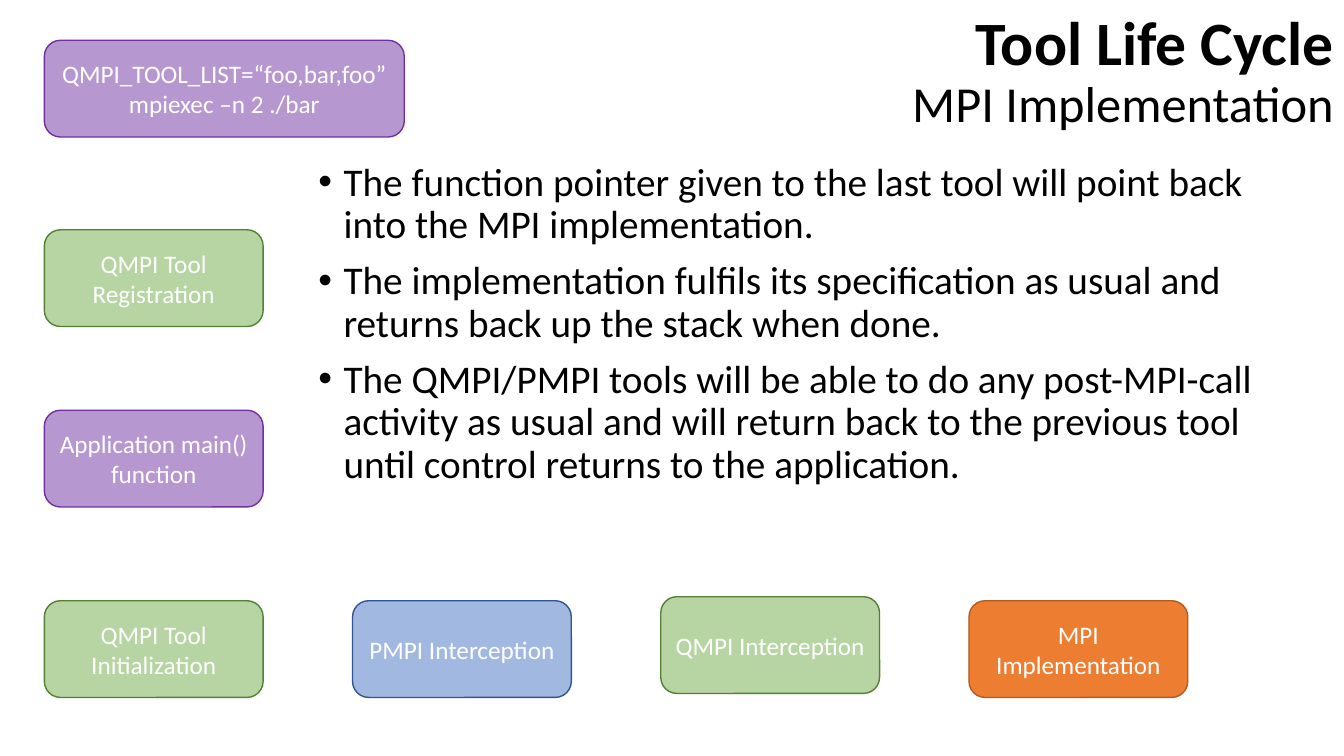
from lxml import etree
from pptx import Presentation
from pptx.dml.color import RGBColor
from pptx.enum.shapes import MSO_SHAPE
from pptx.enum.text import MSO_ANCHOR, PP_ALIGN
from pptx.oxml.ns import qn
from pptx.util import Inches, Pt

ROUNDED = MSO_SHAPE.ROUNDED_RECTANGLE
MIDDLE, TOP = MSO_ANCHOR.MIDDLE, MSO_ANCHOR.TOP
CENTER, RIGHT = PP_ALIGN.CENTER, PP_ALIGN.RIGHT

FONT = "Calibri"
BLACK, WHITE = "000000", "FFFFFF"
# Fill, line, opacity in percent
PURPLE = ("7030A0", "7030A0", 50)
GREEN = ("70AD47", "538035", 50)
BLUE = ("4472C4", "325491", 50)
ORANGE = ("ED7D31", "AF5C24", 100)

LEFT, STEP = 0.44, 3.057
STEP_WIDTH, COMMAND_WIDTH, BOX_HEIGHT = 2.17, 3.57, 0.96
BOTTOM_ROW = 5.96

# Text, column, top, width, style
STAGES = [
    ("QMPI_TOOL_LIST=“foo,bar,foo” mpiexec –n 2 ./bar", 0, 0.4, COMMAND_WIDTH, PURPLE),
    ("QMPI Tool Registration", 0, 2.28, STEP_WIDTH, GREEN),
    ("Application main() function", 0, 4.07, STEP_WIDTH, PURPLE),
    ("QMPI Tool Initialization", 0, BOTTOM_ROW, STEP_WIDTH, GREEN),
    ("PMPI Interception", 1, BOTTOM_ROW, STEP_WIDTH, BLUE),
    ("QMPI Interception", 2, 5.92, STEP_WIDTH, GREEN),
    ("MPI Implementation", 3, BOTTOM_ROW, STEP_WIDTH, ORANGE),
]

POINTS = [
    "The function pointer given to the last tool will point back into the MPI implementation.",
    "The implementation fulfils its specification as usual and returns back up the stack when done.",
    "The QMPI/PMPI tools will be able to do any post-MPI-call activity as usual and will "
    "return back to the previous tool until control returns to the application.",
]


def color(value):
    return RGBColor.from_string(value)


def apply_format(target, values):
    for name, value in values.items():
        setattr(target, name, value)


def add_span(para, text, size, shade, bold=False):
    span = para.add_run()
    span.text = text
    apply_format(span.font, {"name": FONT, "size": Pt(size), "bold": bold})
    span.font.color.rgb = color(shade)


def add_stage(page, text, column, top, width, style):
    fill, line, opacity = style
    box = page.shapes.add_shape(ROUNDED, Inches(LEFT + column * STEP), Inches(top),
                                Inches(width), Inches(BOX_HEIGHT))
    box.shadow.inherit = False
    box.fill.solid()
    box.fill.fore_color.rgb = color(fill)
    if opacity < 100:
        shade = box.fill._xPr.find(".//" + qn("a:srgbClr"))
        etree.SubElement(shade, qn("a:alpha"), val=str(opacity * 1000))
    box.line.color.rgb = color(line)
    box.line.width = Pt(1)
    apply_format(box.text_frame, {"word_wrap": True, "vertical_anchor": MIDDLE})
    para = box.text_frame.paragraphs[0]
    para.alignment = CENTER
    add_span(para, text, 18, WHITE)


def add_text_area(page, left, top, width, height, anchor):
    box = page.shapes.add_textbox(Inches(left), Inches(top), Inches(width), Inches(height))
    apply_format(box.text_frame, {"word_wrap": True, "vertical_anchor": anchor})
    return box.text_frame


def add_title(page, title, subtitle):
    para = add_text_area(page, 1.83, 0, 11.5, 1.45, MIDDLE).paragraphs[0]
    apply_format(para, {"alignment": RIGHT, "line_spacing": 0.9})
    add_span(para, title, 44, BLACK, bold=True)
    para.add_line_break()
    add_span(para, subtitle, 36, BLACK)


def add_bullets(page, points):
    frame = add_text_area(page, 3.06, 1.56, 10.04, 4.33, TOP)
    for index, point in enumerate(points):
        para = frame.add_paragraph() if index else frame.paragraphs[0]
        apply_format(para, {"line_spacing": 0.9, "space_before": Pt(10)})
        properties = para._p.get_or_add_pPr()
        properties.set("marL", str(Inches(0.25)))
        properties.set("indent", str(Inches(-0.25)))
        etree.SubElement(properties, qn("a:buFont"), typeface="Arial")
        etree.SubElement(properties, qn("a:buChar"), char="•")
        add_span(para, point, 28, BLACK)


def main():
    deck = Presentation()
    apply_format(deck, {"slide_width": Inches(13.33), "slide_height": Inches(7.5)})
    page = deck.slides.add_slide(deck.slide_layouts[6])

    # Heading and explanation
    add_title(page, "Tool Life Cycle", "MPI Implementation")
    add_bullets(page, POINTS)

    # Life cycle stages
    for stage in STAGES:
        add_stage(page, *stage)

    deck.save("out.pptx")


if __name__ == "__main__":
    main()
